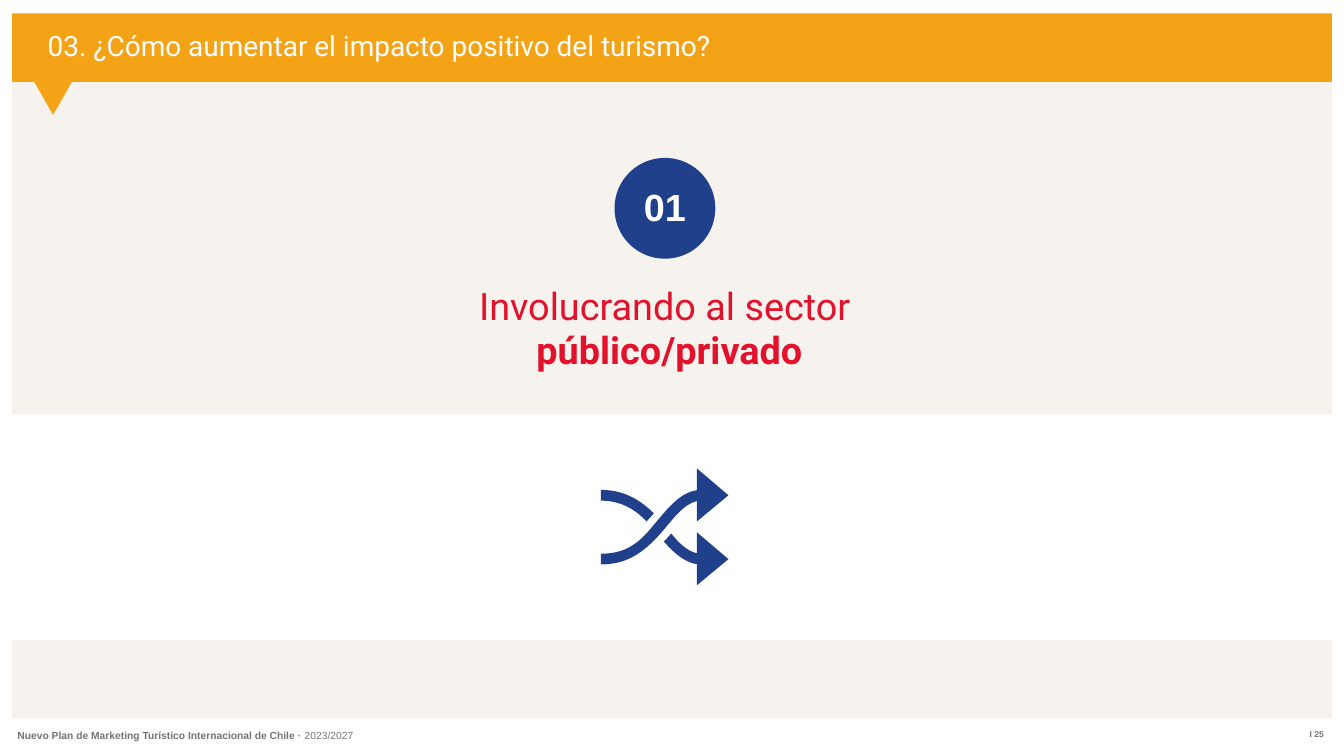
from lxml.etree import SubElement
from pptx import Presentation
from pptx.dml.color import RGBColor
from pptx.enum.shapes import MSO_SHAPE
from pptx.enum.text import PP_ALIGN
from pptx.oxml.ns import qn
from pptx.util import Inches, Pt

COLORS = {"sand": "EFEBE2", "gold": "F5A316", "blue": "21408B",
          "red": "E3112B", "gray": "737373", "white": "FFFFFF"}


def rgb(name):
    return RGBColor.from_string(COLORS[name])


def paint(shape, color, alpha=None):
    """Fill a shape flat, with no line or shadow; alpha is in percent."""
    shape.shadow.inherit = False
    shape.fill.solid()
    shape.fill.fore_color.rgb = rgb(color)
    shape.line.fill.background()
    if alpha:
        tint = shape.fill._xPr.find(".//" + qn("a:srgbClr"))
        SubElement(tint, qn("a:alpha")).set("val", str(alpha * 1000))


def outline(slide, left, top, loops, color):
    """Draw closed loops of points, measured from left and top."""
    loops = [[(Inches(left + x), Inches(top + y)) for x, y in loop]
             for loop in loops]
    build = slide.shapes.build_freeform(*loops[0][0])
    build.add_line_segments(loops[0][1:], close=True)
    for loop in loops[1:]:
        build.move_to(*loop[0])
        build.add_line_segments(loop[1:], close=True)
    paint(build.convert_to_shape(), color)


def curve(a, b, c, d, steps=12):
    """Points along a cubic Bezier curve."""
    points = []
    for i in range(steps + 1):
        t = i / steps
        u = 1 - t
        points.append(tuple(
            u**3 * p + 3 * u * u * t * q + 3 * u * t * t * r + t**3 * s
            for p, q, r, s in zip(a, b, c, d)))
    return points


def text(slide, box, paras, size, color, font="Roboto", align=PP_ALIGN.LEFT,
         indent=0):
    """Each paragraph is a dict of runs (text, bold) and its own format."""
    frame = slide.shapes.add_textbox(*map(Inches, box)).text_frame
    frame.word_wrap = True
    frame.margin_left = Inches(indent)
    frame.margin_top = frame.margin_right = frame.margin_bottom = 0
    for i, item in enumerate(paras):
        para = frame.paragraphs[0] if i == 0 else frame.add_paragraph()
        para.alignment = align
        if "line" in item:
            para.line_spacing = Pt(item["line"])
        if "before" in item:
            para.space_before = Pt(item["before"])
        if "left" in item:
            para._p.get_or_add_pPr().set("marL", str(Inches(item["left"])))
        for words, bold in item["runs"]:
            run = para.add_run()
            run.text = words
            run.font.size = Pt(size)
            run.font.bold = bold
            run.font.name = item.get("font", font)
            run.font.color.rgb = rgb(item.get("color", color))


def band(slide, left, top, width, height):
    shape = slide.shapes.add_shape(
        MSO_SHAPE.RECTANGLE, *map(Inches, (left, top, width, height)))
    paint(shape, "sand", 56)


def header(slide, left, top, width, height):
    # Bar with a pointer below its left end
    outline(slide, left, top, [[
        (width, 0), (0, 0), (0, height), (0.33, height),
        (0.61, height + 0.49), (0.89, height), (width, height)]], "gold")
    text(slide, (left, top + 0.23, width, 0.53),
         [{"runs": [("03. ¿Cómo aumentar el impacto positivo del turismo?",
                     False)]}], 30, "white", indent=0.53)


def topic(slide, left, top, width, height):
    # Number disc
    disc = 1.5
    shape = slide.shapes.add_shape(
        MSO_SHAPE.OVAL, Inches(left + (width - disc) / 2), Inches(top),
        Inches(disc), Inches(disc))
    paint(shape, "blue")
    # Number and heading
    text(slide, (left, top + 0.39, width, height - 0.39), [
        {"runs": [("01", True)], "font": "Arial", "color": "white"},
        {"runs": [("Involucrando al sector", False)],
         "line": 47.5, "before": 58},
        {"runs": [("público/privado", True)], "line": 47.5, "left": 0.14},
    ], 40.5, "red", align=PP_ALIGN.CENTER)


def icon(slide, left, top):
    # Arrowheads
    for drop in (0, 0.95):
        outline(slide, left, top + drop,
                [[(1.43, 0), (1.9, 0.4), (1.43, 0.79)]], "blue")
    # Falling strand, up to the crossing
    start = (curve((0, 0.32), (0.31, 0.32), (0.56, 0.44), (0.79, 0.67))
             + curve((0.68, 0.79), (0.5, 0.59), (0.27, 0.48), (0, 0.48)))
    # Falling strand, after the crossing
    end = (curve((0.94, 1.09), (1.11, 1.28), (1.28, 1.43), (1.5, 1.43))
           + curve((1.5, 1.27), (1.34, 1.27), (1.19, 1.15), (1.05, 0.97)))
    # Rising strand
    rise = (curve((0, 1.27), (0.33, 1.27), (0.53, 1.15), (0.74, 0.9))
            + curve((0.74, 0.9), (1.01, 0.58), (1.2, 0.32), (1.5, 0.32))
            + curve((1.5, 0.48), (1.3, 0.48), (1.15, 0.66), (0.99, 0.85))
            + curve((0.99, 0.85), (0.68, 1.23), (0.42, 1.43), (0, 1.43)))
    outline(slide, left, top, [start], "blue")
    outline(slide, left, top, [end, rise], "blue")


def footer(slide, left, top, width):
    text(slide, (left, top, 5.16, 0.18), [{"runs": [
        ("Nuevo Plan de Marketing Turístico Internacional de Chile · ", True),
        ("2023/2027", False)], "line": 12.2}],
        11, "gray", font="Arial", indent=0.01)
    text(slide, (left + width - 0.28, top, 0.28, 0.16),
         [{"runs": [("I 25", True)], "line": 10.3}],
         9, "gray", font="Arial", indent=0.01)


def main():
    deck = Presentation()
    deck.slide_width, deck.slide_height = Inches(20), Inches(11.25)
    slide = deck.slides.add_slide(deck.slide_layouts[6])
    left, width = 0.18, 19.64
    for top, height in ((9.53, 1.16), (1.22, 4.94), (0.19, 0.01)):
        band(slide, left, top, width, height)
    header(slide, left, 0.2, width, 1.02)
    topic(slide, 7.11, 2.35, 5.57, 3.21)
    icon(slide, 8.94, 6.97)
    footer(slide, 0.25, 10.86, 19.51)
    deck.save("out.pptx")


if __name__ == "__main__":
    main()
